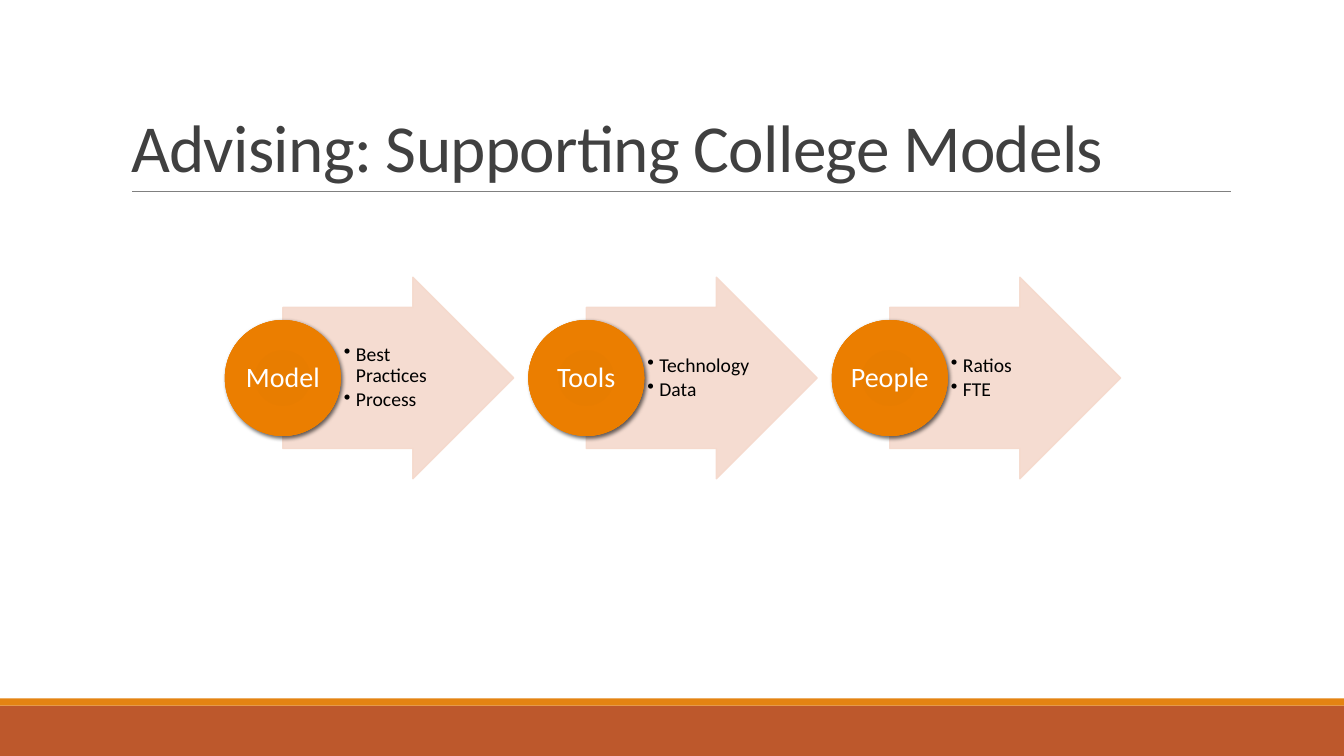
"""Build the slide on advising that supports college models."""
from pptx import Presentation
from pptx.dml.color import RGBColor
from pptx.enum.shapes import MSO_CONNECTOR as Connector, MSO_SHAPE as Preset
from pptx.enum.text import MSO_ANCHOR as Anchor, MSO_AUTO_SIZE as AutoSize, PP_ALIGN as Align
from pptx.oxml import parse_xml
from pptx.oxml.ns import nsdecls
from pptx.util import Inches, Pt

RUST = RGBColor(0xBD, 0x58, 0x2C)
ORANGE = RGBColor(0xE4, 0x83, 0x12)
GREY = RGBColor(0x80, 0x80, 0x80)
CHARCOAL = RGBColor(0x40, 0x40, 0x40)
BLUSH = RGBColor(0xF5, 0xD9, 0xCC)
BLACK = RGBColor(0, 0, 0)
WHITE = RGBColor(0xFF, 0xFF, 0xFF)

WIDTH, HEIGHT = 13.33, 7.5
FIRST_LEFT, STEP, MIDDLE = 2.23, 3.01, 3.75
CIRCLE = 1.15
GLOW = [(0, "E57B00"), (34, "E87D00"), (70, "EB7E00"), (100, "EF8407")]
STAGES = [
    ("Model", ["Best Practices", "Process"]),
    ("Tools", ["Technology", "Data"]),
    ("People", ["Ratios", "FTE"]),
]


def add_element(parent, tag, attributes="", inner=""):
    element = parse_xml(f"<a:{tag} {nsdecls('a')} {attributes}>{inner}</a:{tag}>")
    parent.append(element)
    return element


def write(frame, lines, size, color, insets, **paragraph_format):
    format_values = dict(zip(("margin_left", "margin_top", "margin_right", "margin_bottom"),
                             map(Inches, insets)))
    format_values.update(word_wrap=True, auto_size=AutoSize.NONE)
    for name, value in format_values.items():
        setattr(frame, name, value)
    frame.text = "\n".join(lines)
    for paragraph in frame.paragraphs:
        for name, value in paragraph_format.items():
            setattr(paragraph, name, value)
        font = paragraph.runs[0].font
        font.name, font.size, font.color.rgb = "Calibri", Pt(size), color


deck = Presentation()
deck.slide_width, deck.slide_height = Inches(WIDTH), Inches(HEIGHT)
slide = deck.slides.add_slide(deck.slide_layouts[5])
shapes = slide.shapes

for top, height, color in [(7, 0.5, RUST), (6.93, 0.07, ORANGE)]:
    band = shapes.add_shape(Preset.RECTANGLE, 0, Inches(top), Inches(WIDTH), Inches(height))
    band.shadow.inherit = False
    band.fill.solid()
    band.fill.fore_color.rgb = color
    band.line.fill.background()

rule = shapes.add_connector(Connector.STRAIGHT, Inches(1.31), Inches(1.9), Inches(12.21), Inches(1.9))
rule.line.color.rgb, rule.line.width = GREY, Pt(0.5)
add_element(rule._element.spPr, "effectLst")

title = shapes.title
title.left, title.top, title.width, title.height = map(Inches, (1.2, 0.31, 11, 1.59))
write(title.text_frame, ["Advising: Supporting College Models"], 48, CHARCOAL,
      (0.1, 0.05, 0.1, 0.05), alignment=Align.LEFT, line_spacing=0.85)
title.text_frame.vertical_anchor = Anchor.BOTTOM
title.text_frame.paragraphs[0].runs[0].font._element.set("spc", "-50")

for column, (stage, details) in enumerate(STAGES):
    left = FIRST_LEFT + column * STEP

    arrow = shapes.add_shape(Preset.RIGHT_ARROW, Inches(left + CIRCLE / 2), Inches(MIDDLE - 1),
                             Inches(2.29), Inches(2))
    arrow.adjustments[0], arrow.adjustments[1] = 0.7, 0.5
    arrow.shadow.inherit = False
    arrow.fill.solid()
    arrow.line.width = Pt(1)
    for paint in (arrow.fill.fore_color, arrow.line.color):
        paint.rgb = BLUSH
    for shade in arrow._element.spPr.xpath(".//a:srgbClr"):
        add_element(shade, "alpha", 'val="90000"')

    detail_box = shapes.add_textbox(Inches(left + 1.14), Inches(MIDDLE - 0.7), Inches(1.12), Inches(1.4))
    write(detail_box.text_frame, details, 14, BLACK, (0.04, 0.01, 0.02, 0.01),
          level=1, line_spacing=0.9, space_after=Pt(2))
    detail_box.text_frame.vertical_anchor = Anchor.MIDDLE
    for paragraph in detail_box.text_frame.paragraphs:
        properties = paragraph._p.get_or_add_pPr()
        properties.set("marL", str(Inches(0.12)))
        properties.set("indent", str(Inches(-0.12)))
        add_element(properties, "buChar", 'char="•"')

    circle = shapes.add_shape(Preset.OVAL, Inches(left), Inches(MIDDLE - CIRCLE / 2),
                              Inches(CIRCLE), Inches(CIRCLE))
    stops = "".join(f'<a:gs pos="{place * 1000}"><a:srgbClr val="{color}"/></a:gs>' for place, color in GLOW)
    add_element(circle._element.spPr, "gradFill", 'rotWithShape="1"',
                f'<a:gsLst>{stops}</a:gsLst><a:path path="circle">'
                '<a:fillToRect l="100000" t="100000" r="100000" b="100000"/></a:path>')
    circle.line.fill.background()
    circle.shadow.inherit = False
    add_element(circle._element.spPr.find("{*}effectLst"), "outerShdw",
                f'blurRad="{Pt(3)}" dist="{Pt(2)}" dir="2700000" rotWithShape="0"',
                '<a:srgbClr val="000000"><a:alpha val="60000"/></a:srgbClr>')
    write(circle.text_frame, [stage], 20, WHITE, (0.01,) * 4, alignment=Align.CENTER, line_spacing=0.9)
    circle.text_frame.vertical_anchor = Anchor.MIDDLE

deck.save("out.pptx")
